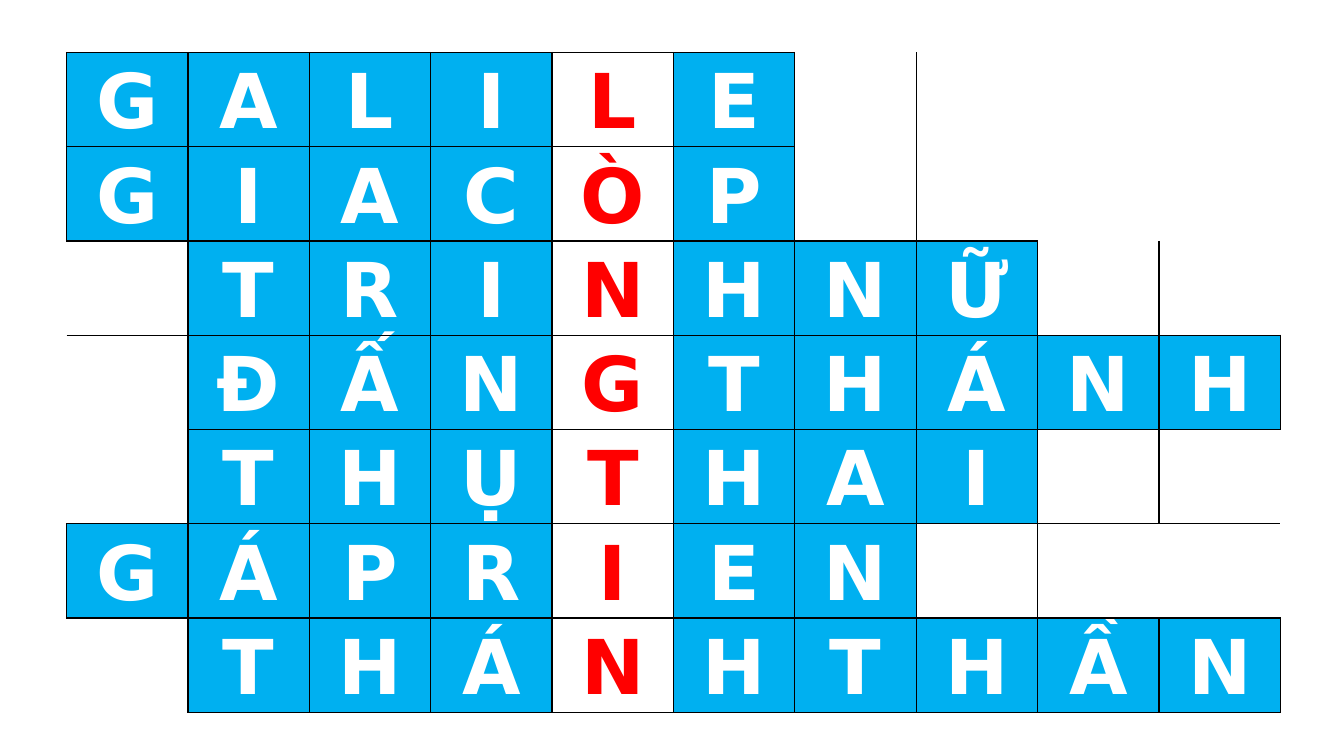
"""Build a solved crossword slide whose red column spells the key phrase."""
from lxml.etree import SubElement
from pptx import Presentation
from pptx.dml.color import RGBColor
from pptx.enum.text import MSO_ANCHOR, PP_ALIGN
from pptx.oxml.ns import qn
from pptx.util import Inches, Pt

BLUE, WHITE, RED, BLACK = "00B0F0", "FFFFFF", "FF0000", "000000"
NO_STYLE = "{2D5ABB26-0587-4C30-8999-92F81FD0307C}"
KEY_COLUMN = 4
COLUMN_COUNT = 10
ANSWERS = [
    (0, "GALILE"),
    (0, "GIACÒP"),
    (1, "TRINHNỮ"),
    (1, "ĐẤNGTHÁNH"),
    (1, "THỤTHAI"),
    (0, "GÁPRIEN"),
    (1, "THÁNHTHẦN"),
]
SIDES = {"a:lnL": (0, -1), "a:lnR": (0, 1), "a:lnT": (-1, 0), "a:lnB": (1, 0)}
CELL_FORMAT = {
    "vertical_anchor": MSO_ANCHOR.MIDDLE,
    "margin_left": Inches(0.07),
    "margin_right": Inches(0.07),
    "margin_top": 0,
    "margin_bottom": 0,
}
PARAGRAPH_FORMAT = {"alignment": PP_ALIGN.CENTER, "line_spacing": 1.07, "space_after": Pt(8)}
FONT_FORMAT = {"name": "DejaVu Sans", "size": Pt(54), "bold": True}


def color(value):
    return RGBColor.from_string(value)


def apply_format(target, values):
    for name, value in values.items():
        setattr(target, name, value)


deck = Presentation()
deck.slide_width, deck.slide_height = Inches(13.33), Inches(7.5)
page = deck.slides.add_slide(deck.slide_layouts[6])

frame = page.shapes.add_table(
    len(ANSWERS), COLUMN_COUNT, Inches(0.66), Inches(0.52), Inches(12.04), Inches(6.42)
)
crossword = frame.table
crossword.first_row = crossword.horz_banding = False
frame._element.find(".//" + qn("a:tableStyleId")).text = NO_STYLE

letters = {
    (row, start + offset): letter
    for row, (start, word) in enumerate(ANSWERS)
    for offset, letter in enumerate(word)
}

for row in range(len(ANSWERS)):
    for column in range(COLUMN_COUNT):
        cell = crossword.cell(row, column)
        apply_format(cell, CELL_FORMAT)
        properties = cell._tc.get_or_add_tcPr()
        for tag, (down, across) in SIDES.items():
            if (row, column) in letters or (row + down, column + across) in letters:
                border = SubElement(properties, qn(tag), w=str(Pt(1)))
                border_fill = SubElement(border, qn("a:solidFill"))
                SubElement(border_fill, qn("a:srgbClr"), val=BLACK)
        if (row, column) not in letters:
            cell.fill.background()
            continue
        is_key = column == KEY_COLUMN
        cell.fill.solid()
        cell.fill.fore_color.rgb = color(WHITE if is_key else BLUE)
        para = cell.text_frame.paragraphs[0]
        apply_format(para, PARAGRAPH_FORMAT)
        span = para.add_run()
        span.text = letters[row, column]
        apply_format(span.font, FONT_FORMAT)
        span.font.color.rgb = color(RED if is_key else WHITE)

deck.save("out.pptx")
